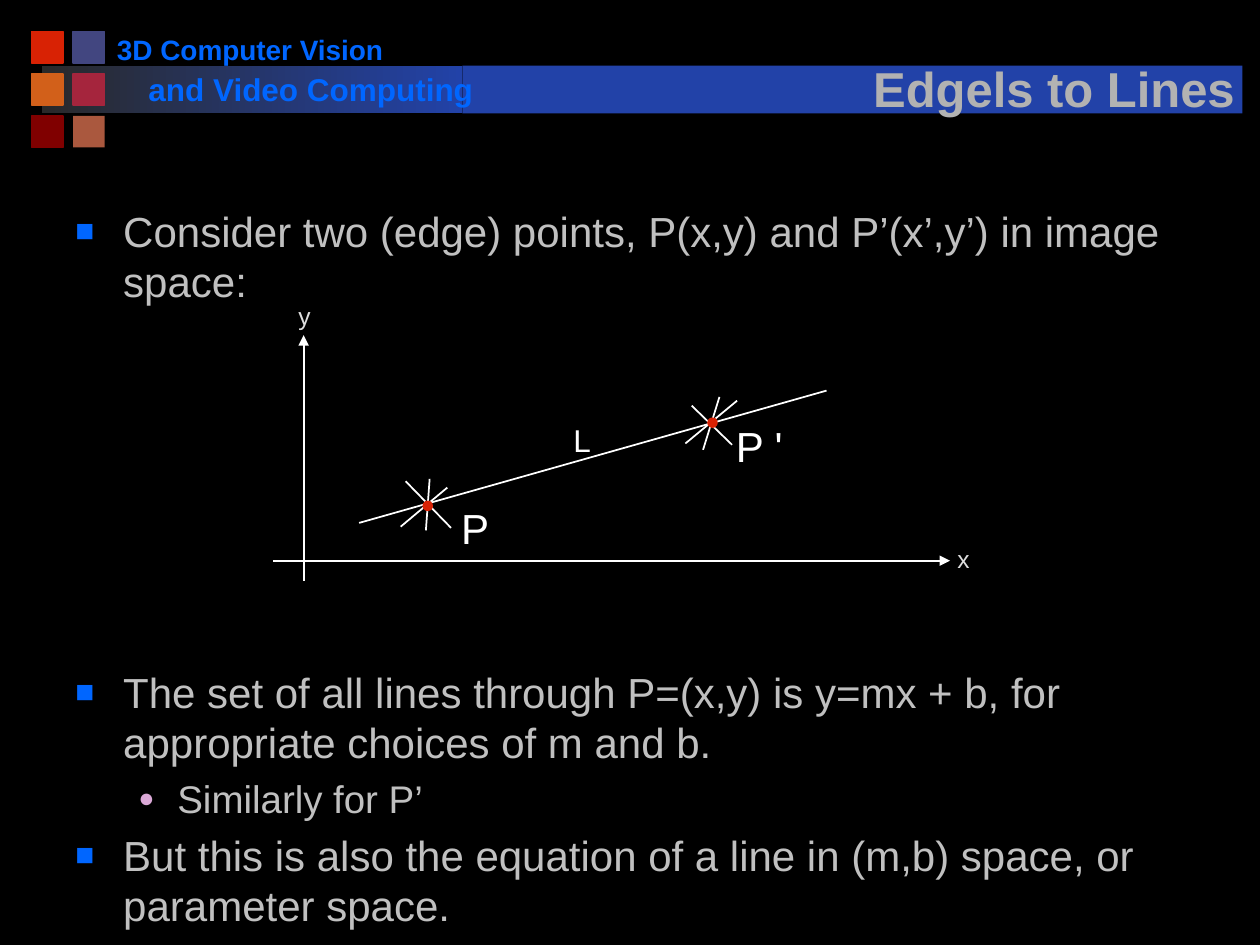
from pptx import Presentation
from pptx.dml.color import RGBColor
from pptx.enum.shapes import MSO_CONNECTOR, MSO_SHAPE
from pptx.enum.text import MSO_ANCHOR, PP_ALIGN
from pptx.oxml import parse_xml
from pptx.oxml.ns import nsdecls
from pptx.util import Inches, Pt
from lxml.etree import SubElement

COLORS = {
    "background": "000000", "band": "2242A8", "band_start": "292929",
    "blue": "0066FF", "title": "B2B2B2", "body": "C0C0C0", "pink": "DBA9D7",
    "white": "FFFFFF", "axis_label": "DDDDDD", "red": "D82204",
}

deck = Presentation()
deck.slide_width, deck.slide_height = Inches(10), Inches(7.5)
page = deck.slides.add_slide(deck.slide_layouts[6])
page.background.fill.solid()
page.background.fill.fore_color.rgb = RGBColor.from_string(COLORS["background"])


def add_text(text, left, top, width, height, size, color, bold=False,
             wrap=False, margin=(0, 0), align=PP_ALIGN.LEFT, anchor=MSO_ANCHOR.TOP):
    box = page.shapes.add_textbox(Inches(left), Inches(top), Inches(width), Inches(height))
    frame = box.text_frame
    frame.word_wrap = wrap
    frame.vertical_anchor = anchor
    frame.margin_left = frame.margin_right = Inches(margin[0])
    frame.margin_top = frame.margin_bottom = Inches(margin[1])
    para = frame.paragraphs[0]
    para.alignment = align
    span = para.add_run()
    span.text = text
    span.font.name, span.font.size, span.font.bold = "Arial", Pt(size), bold
    span.font.color.rgb = RGBColor.from_string(COLORS[color])
    return box


def add_block(kind, left, top, width, height, color, outlined=False):
    block = page.shapes.add_shape(kind, Inches(left), Inches(top), Inches(width), Inches(height))
    block.shadow.inherit = False
    block.fill.solid()
    block.fill.fore_color.rgb = RGBColor.from_string(color)
    if outlined:
        block.line.color.rgb = RGBColor.from_string(color)
        block.line.width = Pt(1)
    else:
        block.line.fill.background()
    return block


# Header band: a fade on the left, solid on the right
fade = add_block(MSO_SHAPE.RECTANGLE, 0.33, 0.52, 3.34, 0.38, COLORS["band"])
fade.fill.gradient()
fade.fill.gradient_angle = 0
for stop, name, position in zip(fade.fill.gradient_stops, ("band_start", "band"), (0, 1)):
    stop.color.rgb = RGBColor.from_string(COLORS[name])
    stop.position = position
add_block(MSO_SHAPE.RECTANGLE, 3.67, 0.52, 6.19, 0.38, COLORS["band"])

# Grid of squares, three rows of two
squares = [["D82204", "424680"], ["D2601A", "A5253D"], ["800000", "AA583E"]]
for row, pair in enumerate(squares):
    for column, color in enumerate(pair):
        add_block(MSO_SHAPE.RECTANGLE, 0.25 + column * 0.33, 0.25 + row * 0.335,
                  0.25, 0.25, color, outlined=color != "AA583E")

# Course name and title
add_text("3D Computer Vision", 0.83, 0.21, 2.32, 0.37, 16, "blue", bold=True, margin=(0.1, 0.05))
add_text("and Video Computing", 1.08, 0.51, 2.83, 0.4, 18, "blue", bold=True,
         wrap=True, margin=(0.1, 0.05))
title = add_text("Edgels to Lines", 6.82, 0.31, 3.09, 0.67, 28, "title", bold=True, wrap=True,
                 margin=(0.1, 0.05), align=PP_ALIGN.CENTER, anchor=MSO_ANCHOR.BOTTOM)
title_font = title.text_frame.paragraphs[0].runs[0].font
title_font.fill._xPr.find("{*}solidFill").addnext(parse_xml(
    f'<a:effectLst {nsdecls("a")}><a:outerShdw dist="35921" dir="2700000">'
    '<a:srgbClr val="000000"/></a:outerShdw></a:effectLst>'))

# Body: text, size, space before, left indent, hanging, bullet, bullet colour, bullet scale
body_lines = [
    ("Consider two (edge) points, P(x,y) and P’(x’,y’) in image space:",
     24, 4.8, 0.38, 0.38, "■", "blue", 75),
    ("The set of all lines through P=(x,y) is y=mx + b, for appropriate choices of m and b.",
     24, 206, 0.38, 0.38, "■", "blue", 75),
    ("Similarly for P’", 22, 4.4, 0.81, 0.31, "●", "pink", 70),
    ("But this is also the equation of a line in (m,b) space, or parameter space.",
     24, 4.8, 0.38, 0.38, "■", "blue", 75),
]
body = page.shapes.add_textbox(Inches(0.5), Inches(1.58), Inches(8.83), Inches(5.8))
body.text_frame.word_wrap = True
for index, (text, size, before, indent, hanging, bullet, color, scale) in enumerate(body_lines):
    para = body.text_frame.paragraphs[0] if index == 0 else body.text_frame.add_paragraph()
    para.space_before = Pt(before)
    span = para.add_run()
    span.text = text
    span.font.name, span.font.size = "Arial", Pt(size)
    span.font.color.rgb = RGBColor.from_string(COLORS["body"])
    properties = para._p.get_or_add_pPr()
    properties.set("marL", str(Inches(indent)))
    properties.set("indent", str(-Inches(hanging)))
    for markup in (f'<a:buClr {nsdecls("a")}><a:srgbClr val="{COLORS[color]}"/></a:buClr>',
                   f'<a:buSzPct {nsdecls("a")} val="{scale * 1000}"/>',
                   f'<a:buFont {nsdecls("a")} typeface="Arial"/>',
                   f'<a:buChar {nsdecls("a")} char="{bullet}"/>'):
        properties.append(parse_xml(markup))

# Axes, line L and the short lines through each point
lines = [
    (2.41, 4.61, 2.41, 2.66, True), (2.17, 4.45, 7.54, 4.45, True),
    (2.85, 4.15, 6.56, 3.1, False),
    (3.38, 4.21, 3.41, 3.8, False), (3.22, 3.82, 3.58, 4.19, False),
    (3.18, 4.18, 3.55, 3.87, False),
    (5.49, 3.22, 5.81, 3.53, False), (5.71, 3.15, 5.58, 3.57, False),
    (5.85, 3.18, 5.44, 3.52, False),
]
for start_x, start_y, end_x, end_y, arrow in lines:
    line = page.shapes.add_connector(MSO_CONNECTOR.STRAIGHT, Inches(start_x), Inches(start_y),
                                     Inches(end_x), Inches(end_y))
    line.line.color.rgb = RGBColor.from_string(COLORS["white"])
    line.line.width = Pt(1)
    if arrow:
        line.line._get_or_add_ln().append(
            parse_xml(f'<a:tailEnd {nsdecls("a")} type="triangle"/>'))
    namespace = "{http://schemas.openxmlformats.org/drawingml/2006/main}"
    SubElement(line._element.spPr, namespace + "effectLst")

# Points P and P'
for left, top in ((3.36, 3.98), (5.62, 3.32)):
    add_block(MSO_SHAPE.OVAL, left, top, 0.07, 0.07, COLORS["red"], outlined=True)

# Labels
add_text("P", 3.66, 3.99, 0.22, 0.4, 24, "white")
add_text("P '", 5.84, 3.34, 0.38, 0.4, 24, "white")
add_text("L", 4.55, 3.34, 0.14, 0.3, 18, "white")
add_text("x", 7.5, 4.27, 0.3, 0.33, 14, "axis_label", margin=(0.1, 0.05))
add_text("y", 2.27, 2.34, 0.3, 0.33, 14, "axis_label", margin=(0.1, 0.05))

deck.save("out.pptx")
